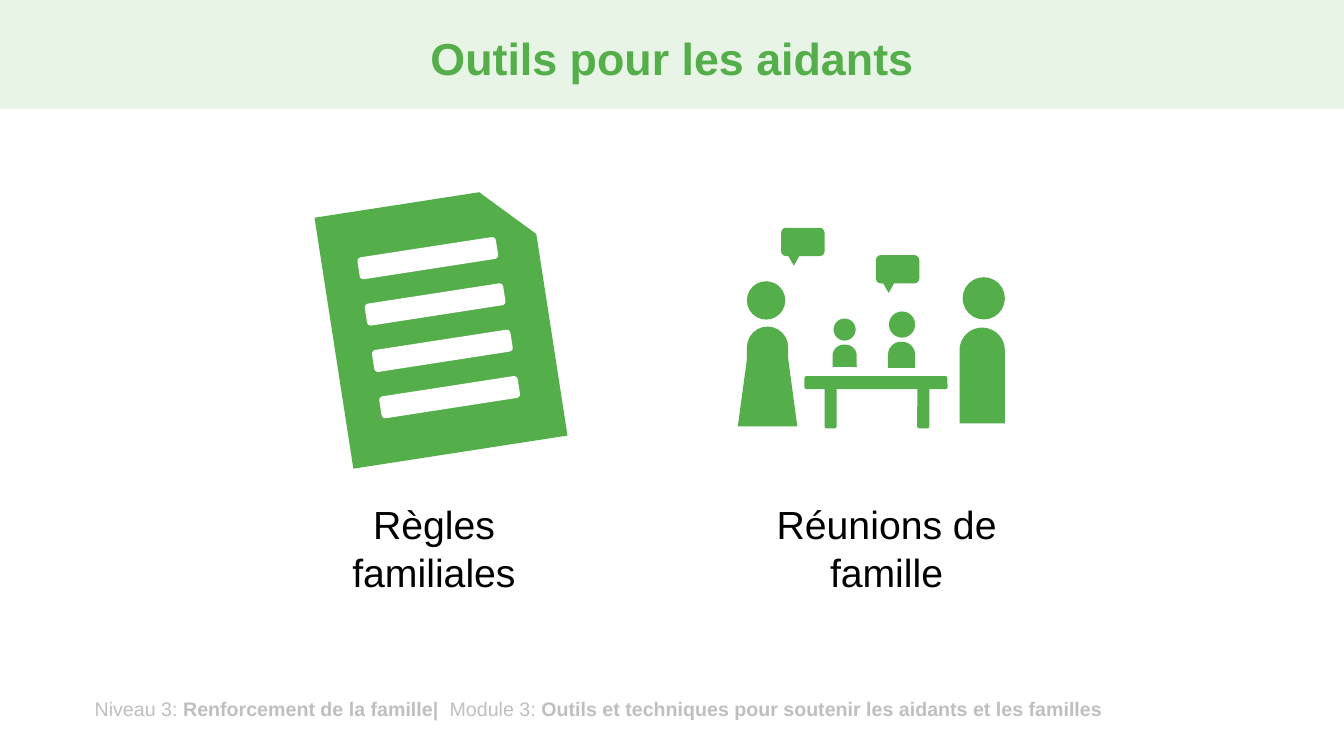
from dataclasses import dataclass
from pptx import Presentation
from pptx.dml.color import RGBColor
from pptx.enum.shapes import MSO_SHAPE as Kind
from pptx.enum.text import MSO_ANCHOR, MSO_AUTO_SIZE, PP_ALIGN
from pptx.util import Pt

GREEN, PALE, WHITE, BLACK, GRAY = "54AF4B", "E8F4E6", "FFFFFF", "000000", "BFBFBF"
TILT = 351.2
Box = tuple[float, float, float, float]


@dataclass
class Form:
    kind: Kind
    box: Box
    fill: str = GREEN
    turn: float = 0
    bends: tuple[float, ...] = ()


@dataclass
class Label:
    box: Box
    runs: list[tuple[str, bool]]
    size: float
    tint: str
    frame: dict
    para: dict


@dataclass
class Person:
    head: tuple[float, float, float]
    body: Box


def paint(target, tint: str) -> None:
    target.rgb = RGBColor.from_string(tint)


def apply(target, values: dict) -> None:
    for name, value in values.items():
        setattr(target, name, value)


def draw_form(slide, form: Form) -> None:
    shape = slide.shapes.add_shape(form.kind, *map(Pt, form.box))
    shape.fill.solid()
    paint(shape.fill.fore_color, form.fill)
    shape.line.fill.background()
    shape.shadow.inherit = False
    shape.rotation = form.turn
    for index, bend in enumerate(form.bends):
        shape.adjustments[index] = bend


def draw_label(slide, label: Label) -> None:
    frame = slide.shapes.add_textbox(*map(Pt, label.box)).text_frame
    apply(frame, {"word_wrap": True} | label.frame)
    para = frame.paragraphs[0]
    apply(para, label.para)
    for text, bold in label.runs:
        run = para.add_run()
        run.text = text
        apply(run.font, {"name": "Arial", "size": Pt(label.size), "bold": bold})
        paint(run.font.color, label.tint)


def draw_person(slide, person: Person) -> None:
    left, top, size = person.head
    draw_form(slide, Form(Kind.ROUND_2_SAME_RECTANGLE, person.body, bends=(0.5, 0)))
    draw_form(slide, Form(Kind.OVAL, (left, top, size, size)))


GROW = {"auto_size": MSO_AUTO_SIZE.SHAPE_TO_FIT_TEXT}
MID = {"vertical_anchor": MSO_ANCHOR.MIDDLE}
CENTER = {"alignment": PP_ALIGN.CENTER}

LABELS = [
    Label((60.5, 494.6, 764.6, 24.5),
          [("Niveau 3: ", False), ("Renforcement de la famille|  ", True), ("Module 3: ", False),
           ("Outils et techniques pour soutenir les aidants et les familles", True)],
          14, GRAY, GROW, {}),
    Label((66.2, 9.4, 828, 68.4), [("Outils pour les aidants", True)],
          32, GREEN, MID, CENTER | {"line_spacing": 0.9}),
    Label((237.6, 354.2, 144.7, 74.9), [("Règles familiales", False)], 28, BLACK, GROW, CENTER),
    Label((535.7, 354.2, 195.1, 74.9), [("Réunions de famille", False)], 28, BLACK, GROW, CENTER),
]

PEOPLE = [
    Person((595.4, 227.5, 15.8), (594.7, 246.2, 17.3, 15.8)),
    Person((687.6, 198, 30.2), (685.4, 234, 32.4, 68.4)),
    Person((533.5, 200.9, 27.4), (533.5, 233.3, 29.5, 36)),
    Person((635, 222.5, 18.7), (634.3, 244.1, 19.4, 18.7)),
]

BAND = Form(Kind.RECTANGLE, (0, 0, 960, 77.8), PALE)
SHEET = [Form(Kind.SNIP_1_RECTANGLE, (237.6, 142.6, 154.8, 181.4), turn=TILT, bends=(0.231,))] + [
    Form(Kind.ROUNDED_RECTANGLE, (255.6 + 5.2 * row, 176.5 + 33.1 * row, 100, 15.8), WHITE, TILT)
    for row in range(4)
]
SKIRT = Form(Kind.FLOWCHART_MANUAL_OPERATION, (527, 241.9, 42.5, 62.6), turn=180)
TABLE = [Form(Kind.ROUNDED_RECTANGLE, (574.6, 268.6, 102.2, 9.4))] + [
    Form(Kind.ROUNDED_RECTANGLE, (left, 272.9, 8.6, 33.1)) for left in (589, 655.2)
]
SPEECH = [
    Form(Kind.ROUNDED_RECTANGULAR_CALLOUT, (left, top, 31, 20.2), bends=(-0.205, 0.84, 0.167))
    for left, top in ((558, 162.7), (625.7, 182.2))
]


def main() -> None:
    deck = Presentation()
    apply(deck, {"slide_width": Pt(960), "slide_height": Pt(540)})
    slide = deck.slides.add_slide(deck.slide_layouts[6])
    draw_form(slide, BAND)
    for label in LABELS:
        draw_label(slide, label)
    for person in PEOPLE:
        draw_person(slide, person)
    for form in [*SHEET, SKIRT, *TABLE, *SPEECH]:
        draw_form(slide, form)
    deck.save("out.pptx")


if __name__ == "__main__":
    main()
